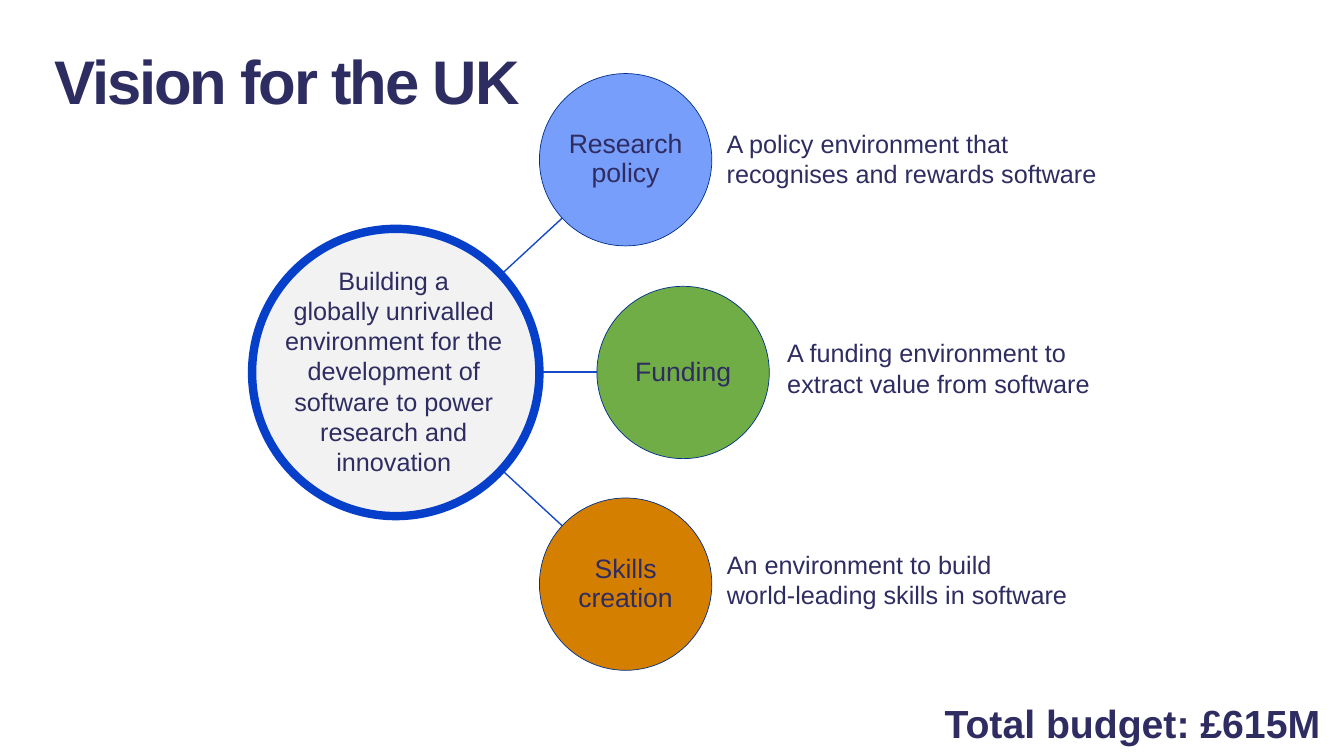
from pptx import Presentation
from pptx.dml.color import RGBColor
from pptx.enum.shapes import MSO_CONNECTOR, MSO_SHAPE
from pptx.enum.text import MSO_ANCHOR, PP_ALIGN
from pptx.util import Pt
from lxml.etree import SubElement
from pptx.oxml.ns import qn

PX = 9144
NAVY = RGBColor(0x2E, 0x2C, 0x61)
TITLE_NAVY = RGBColor(0x2E, 0x2D, 0x62)
SPOKE_BLUE = RGBColor(0x18, 0x4A, 0xC7)
HUB_BLUE = RGBColor(0x06, 0x3F, 0xCA)
HUB_GREY = RGBColor(0xF2, 0xF2, 0xF2)
RIM_BLUE = RGBColor(0x00, 0x30, 0x88)
POLICY_BLUE = RGBColor(0x78, 0x9E, 0xFB)
FUNDING_GREEN = RGBColor(0x70, 0xAD, 0x47)
SKILLS_ORANGE = RGBColor(0xD5, 0x7F, 0x01)

deck = Presentation()
deck.slide_width = 1333 * PX
deck.slide_height = 750 * PX
page = deck.slides.add_slide(deck.slide_layouts[6])


def add_circle(left, top, diameter, fill, line, weight):
    circle = page.shapes.add_shape(
        MSO_SHAPE.OVAL, left * PX, top * PX, diameter * PX, diameter * PX)
    circle.shadow.inherit = False
    circle.fill.solid()
    circle.fill.fore_color.rgb = fill
    circle.line.color.rgb = line
    circle.line.width = Pt(weight)
    return circle


def add_text(left, top, width, height, lines, size=18, wrap=False,
             align=PP_ALIGN.LEFT, bold=False, color=NAVY):
    box = page.shapes.add_textbox(left * PX, top * PX, width * PX, height * PX)
    frame = box.text_frame
    frame.word_wrap = wrap
    for index, line in enumerate(lines):
        para = frame.add_paragraph() if index else frame.paragraphs[0]
        para.alignment = align
        span = para.add_run()
        span.text = line
        span.font.name = "Arial"
        span.font.size = Pt(size)
        span.font.bold = bold
        span.font.color.rgb = color
    return box


for start_x, start_y, end_x, end_y in [
    (492, 461, 558, 522),
    (492, 369, 592, 369),
    (492, 277, 558, 216),
]:
    spoke = page.shapes.add_connector(
        MSO_CONNECTOR.STRAIGHT, start_x * PX, start_y * PX, end_x * PX, end_y * PX)
    spoke.line.color.rgb = SPOKE_BLUE
    spoke.line.width = Pt(1)
    SubElement(spoke._element.spPr, qn("a:effectLst"))

add_circle(250, 227, 285, HUB_GREY, HUB_BLUE, 6)
add_text(272, 258, 237, 222, [
    "Building a",
    "globally unrivalled environment for the development of "
    "software to power research and innovation",
], wrap=True, align=PP_ALIGN.CENTER)

themes = [
    ("Research policy", POLICY_BLUE, 535, 73, 711, 122, 390,
     ["A policy environment that", "recognises and rewards software"]),
    ("Funding", FUNDING_GREEN, 592, 284, 771, 330, 323,
     ["A funding environment to", "extract value from software"]),
    ("Skills creation", SKILLS_ORANGE, 535, 494, 711, 540, 361,
     ["An environment to build", "world-leading skills in software"]),
]
for name, fill, left, top, note_left, note_top, note_width, note in themes:
    circle = add_circle(left, top, 171, fill, RIM_BLUE, 0.5)
    frame = circle.text_frame
    frame.word_wrap = True
    frame.vertical_anchor = MSO_ANCHOR.MIDDLE
    frame.margin_left = frame.margin_right = PX
    frame.margin_top = frame.margin_bottom = PX
    para = frame.paragraphs[0]
    para.alignment = PP_ALIGN.CENTER
    para.line_spacing = 0.9
    span = para.add_run()
    span.text = name
    span.font.name = "Arial"
    span.font.size = Pt(19)
    span.font.color.rgb = NAVY
    add_text(note_left, note_top, note_width, 71, note)

title = add_text(44, 38, 1201, 84, ["Vision for the UK"], size=44, wrap=True,
                 bold=True, color=TITLE_NAVY)
title.text_frame.paragraphs[0].runs[0].font._element.set("spc", "-150")
add_text(927, 689, 398, 57, ["Total budget: £615M"], size=28, bold=True)

deck.save("out.pptx")
